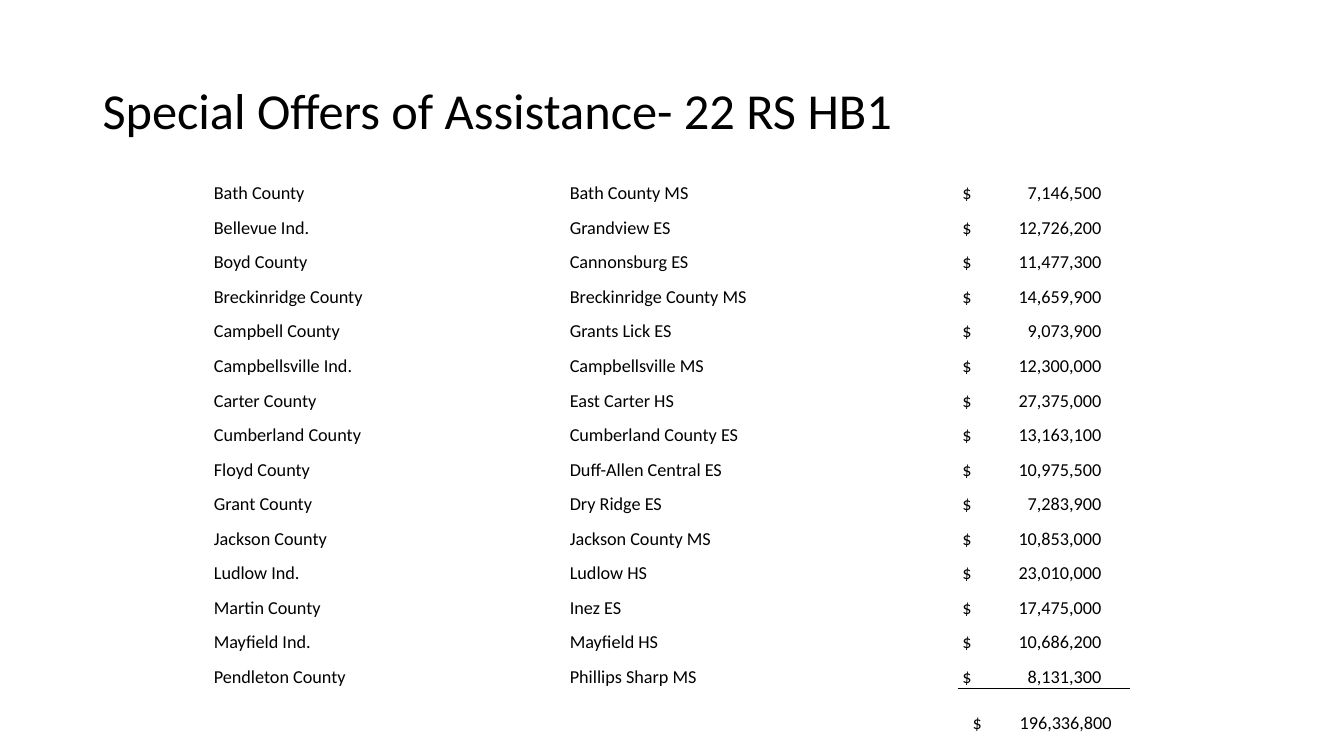
from dataclasses import dataclass

from lxml import etree
from pptx import Presentation
from pptx.dml.color import RGBColor
from pptx.enum import text
from pptx.oxml import ns
from pptx.util import Cm, Pt


@dataclass(frozen=True)
class Theme:
    font: str = "Calibri"
    ink: str = "000000"
    title_size: float = 36
    body_size: float = 13
    rule_width: float = 0.5
    plain_table: str = "{2D5ABB26-0587-4C30-8999-92F81FD0307C}"


OFFERS = [
    ("Bath County", "Bath County MS", 7146500),
    ("Bellevue Ind.", "Grandview ES", 12726200),
    ("Boyd County", "Cannonsburg ES", 11477300),
    ("Breckinridge County", "Breckinridge County MS", 14659900),
    ("Campbell County", "Grants Lick ES", 9073900),
    ("Campbellsville Ind.", "Campbellsville MS", 12300000),
    ("Carter County", "East Carter HS", 27375000),
    ("Cumberland County", "Cumberland County ES", 13163100),
    ("Floyd County", "Duff-Allen Central ES", 10975500),
    ("Grant County", "Dry Ridge ES", 7283900),
    ("Jackson County", "Jackson County MS", 10853000),
    ("Ludlow Ind.", "Ludlow HS", 23010000),
    ("Martin County", "Inez ES", 17475000),
    ("Mayfield Ind.", "Mayfield HS", 10686200),
    ("Pendleton County", "Phillips Sharp MS", 8131300),
]
COLUMN_WIDTHS = [Cm(8.97), Cm(9.8), Cm(4.35)]
ROW_HEIGHT = Cm(0.87)
AMOUNT_TAB = Cm(3.5)
CELL_INSET, AMOUNT_INSET, TOTAL_INSET = Cm(0.03), Cm(0.12), Cm(0.38)


class SlideBuilder:
    def __init__(self, prs, theme):
        self.theme = theme
        self.slide = prs.slides.add_slide(prs.slide_layouts[5])

    def style(self, p, size):
        p.alignment = text.PP_ALIGN.LEFT
        for r in p.runs:
            r.font.name = self.theme.font
            r.font.size = Pt(size)
            r.font.color.rgb = RGBColor.from_string(self.theme.ink)

    def title(self, wording, left, top, width, height):
        sp = self.slide.shapes.title
        sp.left, sp.top, sp.width, sp.height = left, top, width, height
        tf = sp.text_frame
        tf.text = wording
        tf.vertical_anchor = text.MSO_ANCHOR.MIDDLE
        p = tf.paragraphs[0]
        p.line_spacing = 0.9
        self.style(p, self.theme.title_size)

    def table(self, rows, left, top):
        """Add an unstyled table with rows of equal height."""
        table = self.slide.shapes.add_table(
            rows, len(COLUMN_WIDTHS), left, top,
            sum(COLUMN_WIDTHS), ROW_HEIGHT * rows).table
        table.first_row = table.horz_banding = False
        table._tbl.tblPr.find(ns.qn("a:tableStyleId")).text = self.theme.plain_table
        for column, width in zip(table.columns, COLUMN_WIDTHS):
            column.width = width
        for cell in table.iter_cells():
            cell.margin_left = cell.margin_right = cell.margin_top = CELL_INSET
            cell.margin_bottom = 0
            cell.vertical_anchor = text.MSO_ANCHOR.BOTTOM
            cell.fill.background()
        return table

    def label(self, cell, wording):
        cell.text_frame.text = wording
        self.style(cell.text_frame.paragraphs[0], self.theme.body_size)

    def amount(self, cell, value, inset):
        """Write a dollar sign at the left and the number at a right tab stop."""
        self.label(cell, f"$\t{value:,}")
        cell.margin_left = inset
        pPr = cell.text_frame.paragraphs[0]._p.get_or_add_pPr()
        tabs = etree.SubElement(pPr, ns.qn("a:tabLst"))
        etree.SubElement(tabs, ns.qn("a:tab"), pos=str(AMOUNT_TAB), algn="r")

    def border(self, cell, side):
        """Rule one side of a cell: T, B, L or R."""
        line = etree.Element(ns.qn(f"a:ln{side}"), w=str(Pt(self.theme.rule_width)))
        fill = etree.SubElement(line, ns.qn("a:solidFill"))
        etree.SubElement(fill, ns.qn("a:srgbClr"), val=self.theme.ink)
        cell._tc.get_or_add_tcPr().insert(0, line)


def main():
    prs = Presentation()
    prs.slide_width, prs.slide_height = Cm(33.87), Cm(19.05)
    page = SlideBuilder(prs, Theme())
    page.title("Special Offers of Assistance- 22 RS HB1",
               Cm(2.33), Cm(1.01), Cm(29.21), Cm(3.68))

    count = len(OFFERS)
    table = page.table(count + 2, Cm(5.36), Cm(4.29))
    for row, (district, school, value) in enumerate(OFFERS):
        page.label(table.cell(row, 0), district)
        page.label(table.cell(row, 1), school)
        page.amount(table.cell(row, 2), value, AMOUNT_INSET)

    total = table.cell(count, 2)
    total.merge(table.cell(count + 1, 2))
    total.vertical_anchor = text.MSO_ANCHOR.MIDDLE
    page.amount(total, sum(value for *_, value in OFFERS), TOTAL_INSET)
    page.border(table.cell(count - 1, 2), "B")
    page.border(total, "T")
    prs.save("out.pptx")


if __name__ == "__main__":
    main()
